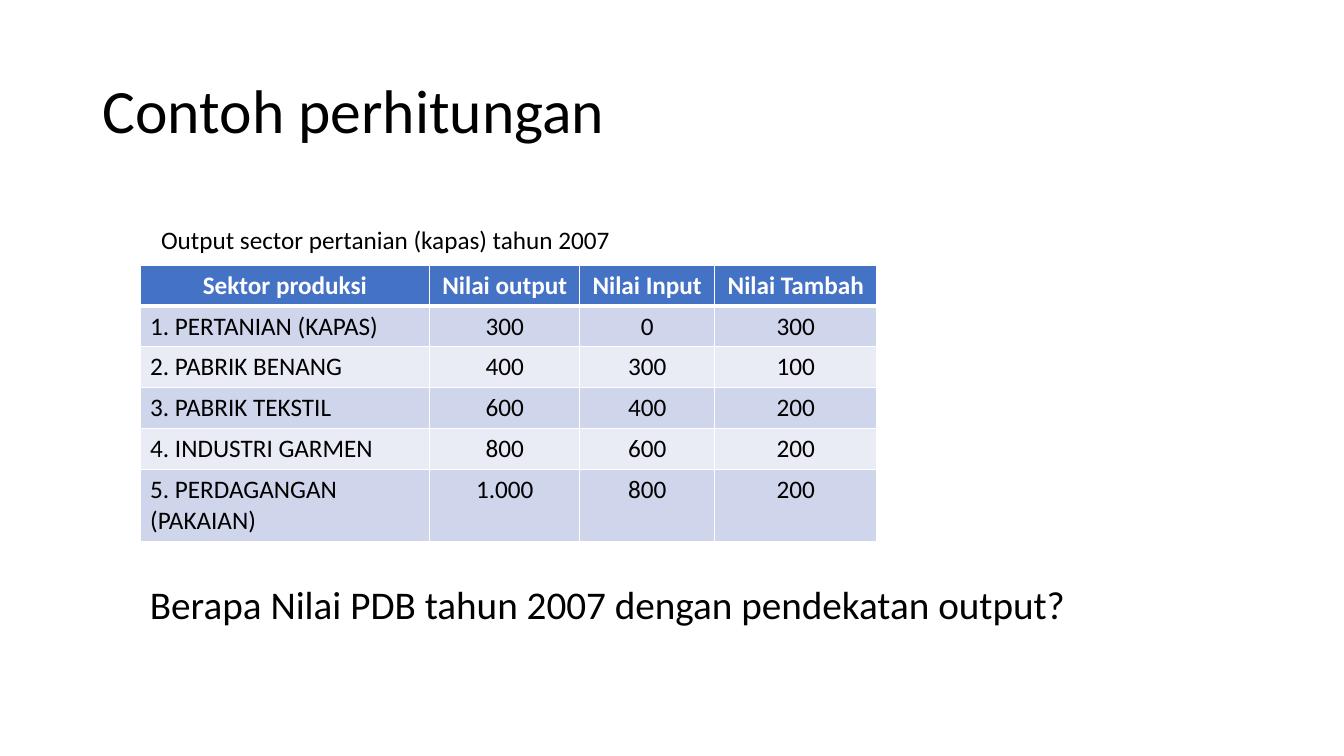
from dataclasses import dataclass

from lxml import etree
from pptx import Presentation
from pptx.dml.color import RGBColor
from pptx.enum import text
from pptx.oxml import ns
from pptx.util import Cm, Pt


@dataclass(frozen=True)
class Theme:
    font: str = "Calibri"
    ink: str = "000000"
    white: str = "FFFFFF"
    header: str = "4472C4"
    bands: tuple[str, str] = ("CFD5EA", "E9EBF5")
    title_size: int = 44
    question_size: int = 28
    body_size: int = 18
    border: float = 1
    header_border: float = 3


@dataclass(frozen=True)
class Label:
    text: str
    left: float
    top: float
    width: float
    height: float
    size: int


@dataclass(frozen=True)
class Sector:
    name: str
    output: str
    input: str
    added: str

    def cells(self) -> tuple[str, ...]:
        return self.name, self.output, self.input, self.added


THEME = Theme()

HEADINGS = Sector("Sektor produksi", "Nilai output", "Nilai Input", "Nilai Tambah")
SECTORS = [
    Sector("1. PERTANIAN (KAPAS)", "300", "0", "300"),
    Sector("2. PABRIK BENANG", "400", "300", "100"),
    Sector("3. PABRIK TEKSTIL", "600", "400", "200"),
    Sector("4. INDUSTRI GARMEN", "800", "600", "200"),
    Sector("5. PERDAGANGAN (PAKAIAN)", "1.000", "800", "200"),
]
LABELS = [
    Label("Berapa Nilai PDB tahun 2007 dengan pendekatan output?",
          3.53, 14.5, 24.08, 1.45, THEME.question_size),
    Label("Output sector pertanian (kapas) tahun 2007",
          3.81, 5.54, 11.94, 1.02, THEME.body_size),
]
TABLE_LEFT, TABLE_TOP = 3.53, 6.68
COLUMN_WIDTHS = (7.3, 3.78, 3.4, 4.09)
ROW_HEIGHTS = (1.03,) * 5 + (1.8,)


def format_text(tf, size: int, color: str = THEME.ink, bold: bool = False,
                align=text.PP_ALIGN.LEFT) -> None:
    for p in tf.paragraphs:
        p.alignment = align
        for r in p.runs:
            r.font.name = THEME.font
            r.font.size = Pt(size)
            r.font.bold = bold
            r.font.color.rgb = RGBColor.from_string(color)


def set_borders(cell, bottom: float, top: float) -> None:
    """Draw white borders, placed before the fill as the schema requires."""
    tc_pr = cell._tc.get_or_add_tcPr()
    widths = {"lnL": THEME.border, "lnR": THEME.border, "lnT": top, "lnB": bottom}
    for position, (tag, width) in enumerate(widths.items()):
        line = etree.Element(ns.qn(f"a:{tag}"), w=str(Pt(width)))
        fill = etree.SubElement(line, ns.qn("a:solidFill"))
        etree.SubElement(fill, ns.qn("a:srgbClr"), val=THEME.white)
        tc_pr.insert(position, line)


def add_title(slide, title: str) -> None:
    sp = slide.shapes.title
    sp.left, sp.top, sp.width, sp.height = Cm(2.33), Cm(1.01), Cm(29.21), Cm(3.68)
    tf = sp.text_frame
    tf.text = title
    tf.vertical_anchor = text.MSO_ANCHOR.MIDDLE
    tf.paragraphs[0].line_spacing = 0.9
    format_text(tf, THEME.title_size)


def add_label(slide, label: Label) -> None:
    sp = slide.shapes.add_textbox(Cm(label.left), Cm(label.top),
                                  Cm(label.width), Cm(label.height))
    tf = sp.text_frame
    tf.word_wrap = True
    tf.text = label.text
    format_text(tf, label.size)


def add_sector_table(slide) -> None:
    rows = [HEADINGS, *SECTORS]
    table = slide.shapes.add_table(
        len(rows), len(COLUMN_WIDTHS), Cm(TABLE_LEFT), Cm(TABLE_TOP),
        Cm(sum(COLUMN_WIDTHS)), Cm(sum(ROW_HEIGHTS))).table
    for column, width in zip(table.columns, COLUMN_WIDTHS):
        column.width = Cm(width)
    for i, (sector, height) in enumerate(zip(rows, ROW_HEIGHTS)):
        table.rows[i].height = Cm(height)
        is_header = i == 0
        for j, value in enumerate(sector.cells()):
            cell = table.cell(i, j)
            cell.text = value
            cell.fill.solid()
            cell.fill.fore_color.rgb = RGBColor.from_string(
                THEME.header if is_header else THEME.bands[(i - 1) % 2])
            centred = is_header or j > 0
            format_text(cell.text_frame, THEME.body_size,
                        THEME.white if is_header else THEME.ink, is_header,
                        text.PP_ALIGN.CENTER if centred else text.PP_ALIGN.LEFT)
            set_borders(cell,
                        bottom=THEME.header_border if is_header else THEME.border,
                        top=THEME.header_border if i == 1 else THEME.border)


def main() -> None:
    prs = Presentation()
    prs.slide_width, prs.slide_height = Cm(33.87), Cm(19.05)
    slide = prs.slides.add_slide(prs.slide_layouts.get_by_name("Title Only"))
    add_title(slide, "Contoh perhitungan")
    add_sector_table(slide)
    for label in LABELS:
        add_label(slide, label)
    prs.save("out.pptx")


if __name__ == "__main__":
    main()
